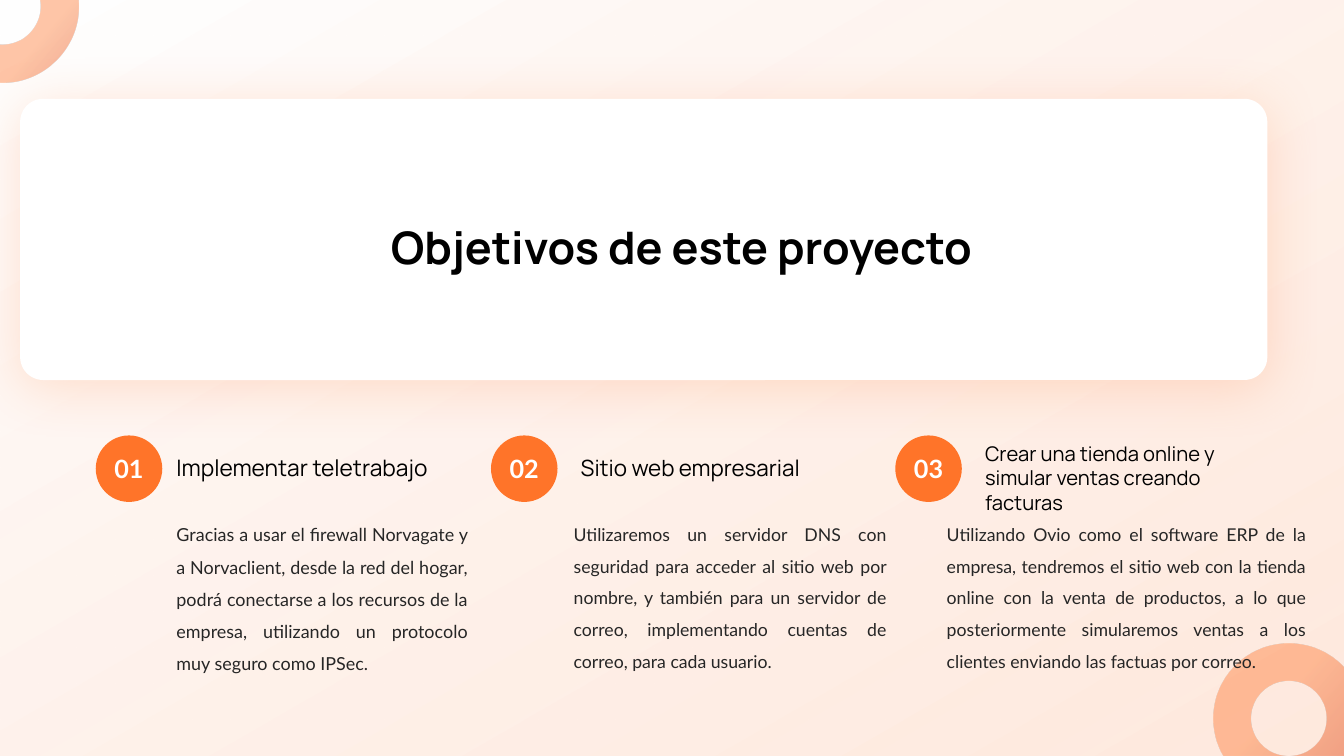
from dataclasses import dataclass
from math import ceil, cos, floor, radians, sin, tan

from lxml.etree import SubElement
from pptx import Presentation
from pptx.dml.color import RGBColor
from pptx.enum.shapes import MSO_SHAPE
from pptx.enum.text import MSO_ANCHOR, MSO_AUTO_SIZE, PP_ALIGN
from pptx.oxml.ns import qn
from pptx.shapes.base import BaseShape
from pptx.slide import Slide
from pptx.util import Inches, Pt

ORANGE, RED, PEACH = "FF7429", "DE3500", "FFE3D4"
WHITE, BLACK, GRAY = "FFFFFF", "000000", "262626"
HEADING_FONT, BODY_FONT = "Manrope", "Lato"
ROW_TOP, BODY_TOP, BADGE_SIZE = 4.32, 5.09, 0.66

Point = tuple[float, float]
Box = tuple[float, float, float, float]


@dataclass
class TextStyle:
    size: float
    font: str
    color: str
    bold: bool = False
    align: PP_ALIGN = PP_ALIGN.LEFT
    anchor: MSO_ANCHOR = MSO_ANCHOR.TOP
    spacing: float = 1.0
    wrap: bool = True


@dataclass
class Stop:
    position: float
    color: str
    alpha: int


@dataclass
class Ring:
    center: Point
    outer_radius: float
    outer_arc: Point
    inner_arc: Point
    corners: list[Point]


@dataclass
class Goal:
    number: str
    badge_left: float
    heading: str
    heading_box: Box
    heading_size: float
    body: str
    body_box: Box
    body_size: float


RINGS = [
    Ring((0.03, 0.07), 0.75, (-5.4, 93.8), (97.7, -10.8), []),
    Ring((12.78, 7.13), 0.74, (150, 318), (90, -270), [(13.33, 7.5)]),
]

GOALS = [
    Goal("01", 0.95, "Implementar teletrabajo", (1.75, ROW_TOP, 3, 0.45), 16.2,
         "Gracias a usar el firewall Norvagate y a Norvaclient, desde la red del hogar, "
         "podrá conectarse a los recursos de la empresa, utilizando un protocolo muy "
         "seguro como IPSec.", (1.75, BODY_TOP, 2.89, 1.66), 12.8),
    Goal("02", 4.87, "Sitio web empresarial", (5.76, ROW_TOP, 2.61, 0.45), 16,
         "Utilizaremos un servidor DNS con seguridad para acceder al sitio web por "
         "nombre, y también para un servidor de correo, implementando cuentas de "
         "correo, para cada usuario.", (5.69, BODY_TOP, 3.1, 1.66), 12.6),
    Goal("03", 8.88, "Crear una tienda online y simular ventas creando facturas",
         (9.77, ROW_TOP, 2.8, 0.78), 14.4,
         "Utilizando Ovio como el software ERP de la empresa, tendremos el sitio web "
         "con la tienda online con la venta de productos, a lo que posteriormente "
         "simularemos ventas a los clientes enviando las factuas por correo.",
         (9.39, BODY_TOP, 3.56, 2.02), 12.6),
]


def rgb(color: str) -> RGBColor:
    return RGBColor.from_string(color)


def emu(values: tuple[float, ...]) -> list[Inches]:
    return [Inches(value) for value in values]


def write(shape: BaseShape, text: str, style: TextStyle) -> None:
    frame = shape.text_frame
    frame.auto_size = MSO_AUTO_SIZE.NONE
    frame.word_wrap = style.wrap
    frame.vertical_anchor = style.anchor
    frame.margin_left = frame.margin_right = frame.margin_top = frame.margin_bottom = 0
    para = frame.paragraphs[0]
    para.alignment = style.align
    para.line_spacing = style.spacing
    span = para.add_run()
    span.text = text
    span.font.size = Pt(style.size)
    span.font.name = style.font
    span.font.bold = style.bold
    span.font.color.rgb = rgb(style.color)


def add_text(page: Slide, box: Box, text: str, style: TextStyle) -> None:
    write(page.shapes.add_textbox(*emu(box)), text, style)


def add_solid(page: Slide, kind: MSO_SHAPE, box: Box, color: str) -> BaseShape:
    shape = page.shapes.add_shape(kind, *emu(box))
    shape.shadow.inherit = False
    shape.fill.solid()
    shape.fill.fore_color.rgb = rgb(color)
    shape.line.fill.background()
    return shape


def add_alpha(color_element, percent: int) -> None:
    SubElement(color_element, qn("a:alpha"), val=str(percent * 1000))


def set_gradient(shape: BaseShape, stops: list[Stop], angle: float) -> None:
    shape.fill.gradient()
    shape.fill.gradient_angle = 360 - angle
    for target, stop in zip(shape.fill.gradient_stops, stops):
        target.position = stop.position
        target.color.rgb = rgb(stop.color)
    for element, stop in zip(shape.element.spPr.iter(qn("a:srgbClr")), stops):
        add_alpha(element, stop.alpha)


def arc(center: Point, radius: float, limits: Point) -> list[Point]:
    low, high = sorted(limits)
    quarters = [90 * turn for turn in range(floor(low / 90) + 1, ceil(high / 90))]
    angles = [radians(angle) for angle in [low, *quarters, high]]
    if limits[0] > limits[1]:
        angles.reverse()

    def at(angle: float, pull: float = 0) -> Point:
        return (center[0] + radius * (cos(angle) - pull * sin(angle)),
                center[1] + radius * (sin(angle) + pull * cos(angle)))

    points = [at(angles[0])]
    for start, end in zip(angles, angles[1:]):
        pull = 4 / 3 * tan((end - start) / 4)
        points += [at(start, pull), at(end, -pull), at(end)]
    return points


def bend(lines: list) -> None:
    for first, second, third in zip(lines[::3], lines[1::3], lines[2::3]):
        first.tag = qn("a:cubicBezTo")
        for line in (second, third):
            first.append(line[0])
            line.getparent().remove(line)


def add_ring(page: Slide, ring: Ring) -> None:
    outer = arc(ring.center, ring.outer_radius, ring.outer_arc)
    inner = arc(ring.center, ring.outer_radius / 2, ring.inner_arc)
    points = [tuple(emu(point)) for point in outer + ring.corners + inner]
    builder = page.shapes.build_freeform(*points[0])
    builder.add_line_segments(points[1:], close=True)
    shape = builder.convert_to_shape()
    lines = list(shape.element.spPr.iter(qn("a:lnTo")))
    bend(lines[:len(outer) - 1])
    bend(lines[len(outer) + len(ring.corners):])
    shape.shadow.inherit = False
    shape.line.fill.background()
    set_gradient(shape, [Stop(0.5, ORANGE, 40), Stop(1, RED, 40)], 40)


def add_card(page: Slide) -> None:
    card = add_solid(page, MSO_SHAPE.ROUNDED_RECTANGLE, (0.2, 0.98, 12.37, 2.79), WHITE)
    card.adjustments[0] = 0.082
    effects = card.element.spPr.find(qn("a:effectLst"))
    glow = SubElement(effects, qn("a:outerShdw"), blurRad=str(Pt(40)), dist=str(Pt(6)),
                      dir=str(90 * 60000), algn="ctr", rotWithShape="0")
    add_alpha(SubElement(glow, qn("a:srgbClr"), val=ORANGE), 20)


def place_title(page: Slide) -> None:
    title = page.shapes.title
    title.left, title.top, title.width, title.height = emu((0.95, 0.98, 11.62, 2.77))
    write(title, "Objetivos de este proyecto",
          TextStyle(32, HEADING_FONT, BLACK, True, PP_ALIGN.CENTER, MSO_ANCHOR.MIDDLE, 1.3))
    title.element.getparent().append(title.element)


def add_goal(page: Slide, goal: Goal) -> None:
    badge = add_solid(page, MSO_SHAPE.OVAL,
                      (goal.badge_left, ROW_TOP, BADGE_SIZE, BADGE_SIZE), ORANGE)
    write(badge, goal.number, TextStyle(18, BODY_FONT, WHITE, True, PP_ALIGN.CENTER,
                                        MSO_ANCHOR.MIDDLE, wrap=False))
    add_text(page, goal.body_box, goal.body,
             TextStyle(goal.body_size, BODY_FONT, GRAY, align=PP_ALIGN.JUSTIFY, spacing=1.5))
    add_text(page, goal.heading_box, goal.heading,
             TextStyle(goal.heading_size, HEADING_FONT, BLACK, anchor=MSO_ANCHOR.BOTTOM))


def main() -> None:
    deck = Presentation()
    deck.slide_width, deck.slide_height = emu((13.33, 7.5))
    page = deck.slides.add_slide(deck.slide_layouts[5])
    backdrop = add_solid(page, MSO_SHAPE.RECTANGLE, (0, 0, 13.35, 7.5), WHITE)
    set_gradient(backdrop, [Stop(0, PEACH, 75), Stop(1, WHITE, 100)], 240)
    for ring in RINGS:
        add_ring(page, ring)
    add_card(page)
    place_title(page)
    for goal in GOALS:
        add_goal(page, goal)
    deck.save("out.pptx")


if __name__ == "__main__":
    main()
